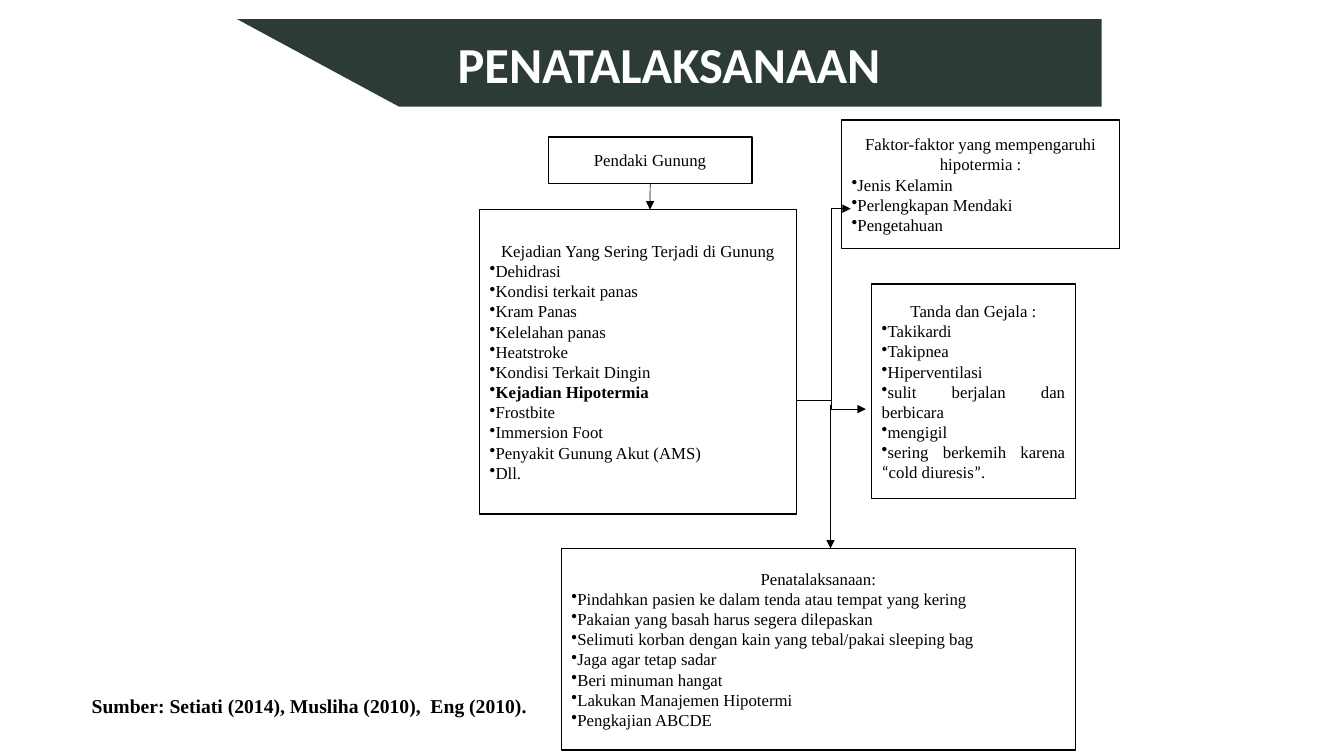
import itertools
from dataclasses import dataclass
from typing import Any

import pptx
import pptx.dml.color
import pptx.enum.shapes
import pptx.enum.text
import pptx.oxml
import pptx.oxml.ns
import pptx.util
from pptx.util import Cm

ALIGN = pptx.enum.text.PP_ALIGN
MIDDLE = pptx.enum.text.MSO_ANCHOR.MIDDLE
CONNECTOR = pptx.enum.shapes.MSO_CONNECTOR


@dataclass(frozen=True)
class Theme:
    banner: str = "2C3B38"
    paper: str = "FFFFFF"
    ink: str = "000000"
    heading_font: str = "Calibri"
    body_font: str = "Times New Roman"
    title_size: float = 36
    source_size: float = 14
    body_size: float = 12
    box_line: float = 1
    arrow_line: float = 0.5


@dataclass(frozen=True)
class Box:
    left: float
    top: float
    width: float
    height: float
    heading: str
    items: tuple[str, ...] = ()
    item_align: Any = ALIGN.LEFT
    bold_item: str = ""


@dataclass(frozen=True)
class Arrow:
    start: tuple[float, float]
    end: tuple[float, float]
    kind: Any = CONNECTOR.STRAIGHT
    bend: int | None = None


THEME = Theme()

CLIMBERS = Box(13.82, 3.45, 5.13, 1.17, "Pendaki Gunung")
INCIDENTS = Box(
    12.09, 5.28, 7.98, 7.67, "Kejadian Yang Sering Terjadi di Gunung",
    ("Dehidrasi", "Kondisi terkait panas", "Kram Panas", "Kelelahan panas",
     "Heatstroke", "Kondisi Terkait Dingin", "Kejadian Hipotermia", "Frostbite",
     "Immersion Foot", "Penyakit Gunung Akut (AMS)", "Dll."),
    bold_item="Kejadian Hipotermia")
FACTORS = Box(
    21.21, 3.02, 7.01, 3.25, "Faktor-faktor yang mempengaruhi hipotermia :",
    ("Jenis Kelamin", "Perlengkapan Mendaki", "Pengetahuan"), ALIGN.JUSTIFY)
SYMPTOMS = Box(
    21.97, 7.16, 5.13, 5.41, "Tanda dan Gejala :",
    ("Takikardi", "Takipnea", "Hiperventilasi", "sulit berjalan dan berbicara",
     "mengigil", "sering berkemih karena “cold diuresis”."), ALIGN.JUSTIFY)
TREATMENT = Box(
    14.15, 13.82, 12.95, 5.08, "Penatalaksanaan:",
    ("Pindahkan pasien ke dalam tenda atau tempat yang kering",
     "Pakaian yang basah harus segera dilepaskan",
     "Selimuti korban dengan kain yang tebal/pakai sleeping bag",
     "Jaga agar tetap sadar", "Beri minuman hangat",
     "Lakukan Manajemen Hipotermi", "Pengkajian ABCDE"))

CLIMBERS_ARROW = Arrow((16.38, 4.62), (16.38, 5.28))
BRANCH_ARROWS = (
    Arrow((20.07, 10.08), (21.82, 10.31), CONNECTOR.ELBOW),
    Arrow((20.93, 10.21), (20.93, 13.82)),
    Arrow((21.06, 10.31), (21.44, 5.26), CONNECTOR.ELBOW, bend=-31800),
)


def apply_format(target: Any, values: dict[str, Any]) -> None:
    for name, value in values.items():
        setattr(target, name, value)


def rgb(code: str) -> pptx.dml.color.RGBColor:
    return pptx.dml.color.RGBColor.from_string(code)


def add_xml(parent: Any, tag: str, **attributes: str) -> Any:
    child = pptx.oxml.parse_xml(f"<{tag} {pptx.oxml.ns.nsdecls('a')}/>")
    for name, value in attributes.items():
        child.set(name, value)
    parent.append(child)
    return child


def write(paragraph: Any, text: str, font: str, size: float, color: str,
          bold: bool = False) -> None:
    """Curly quotes take the heading font; all else takes the given one."""
    for is_quote, letters in itertools.groupby(text, lambda letter: letter in "“”"):
        run = paragraph.add_run()
        run.text = "".join(letters)
        apply_format(run.font, {
            "name": THEME.heading_font if is_quote else font,
            "size": pptx.util.Pt(size), "bold": bold})
        run.font.color.rgb = rgb(color)


def draw_banner(slide: Any) -> None:
    left, top, right, bottom, slant = 5.97, 0.48, 27.76, 2.69, 10.06
    builder = slide.shapes.build_freeform(Cm(left), Cm(top))
    builder.add_line_segments(
        [(Cm(right), Cm(top)), (Cm(right), Cm(bottom)), (Cm(slant), Cm(bottom))])
    banner = builder.convert_to_shape()
    banner.shadow.inherit = False
    banner.fill.solid()
    banner.fill.fore_color.rgb = rgb(THEME.banner)
    banner.line.fill.background()

    title = slide.shapes.title
    apply_format(title, {"left": Cm(left), "top": Cm(top),
                         "width": Cm(right - left), "height": Cm(bottom - top)})
    apply_format(title.text_frame, {
        "vertical_anchor": MIDDLE, "word_wrap": True,
        "auto_size": pptx.enum.text.MSO_AUTO_SIZE.NONE})
    heading = title.text_frame.paragraphs[0]
    heading.alignment = ALIGN.CENTER
    write(heading, "PENATALAKSANAAN", THEME.heading_font, THEME.title_size,
          THEME.paper, bold=True)
    banner.element.addnext(title.element)  # title in front of the banner


def draw_source(slide: Any) -> None:
    source = slide.shapes.add_textbox(Cm(2.06), Cm(17.35), Cm(15.52), Cm(0.86))
    apply_format(source.text_frame, {
        "word_wrap": True, "vertical_anchor": MIDDLE,
        "auto_size": pptx.enum.text.MSO_AUTO_SIZE.SHAPE_TO_FIT_TEXT})
    write(source.text_frame.paragraphs[0],
          "Sumber: Setiati (2014), Musliha (2010),  Eng (2010).",
          THEME.body_font, THEME.source_size, THEME.ink, bold=True)


def draw_box(slide: Any, box: Box) -> Any:
    shape = slide.shapes.add_shape(
        pptx.enum.shapes.MSO_SHAPE.RECTANGLE,
        Cm(box.left), Cm(box.top), Cm(box.width), Cm(box.height))
    shape.shadow.inherit = False
    shape.fill.solid()
    shape.fill.fore_color.rgb = rgb(THEME.paper)
    shape.line.color.rgb = rgb(THEME.ink)
    shape.line.width = pptx.util.Pt(THEME.box_line)
    frame = shape.text_frame
    apply_format(frame, {"word_wrap": True, "vertical_anchor": MIDDLE})

    heading = frame.paragraphs[0]
    heading.alignment = ALIGN.CENTER
    write(heading, box.heading, THEME.body_font, THEME.body_size, THEME.ink)
    for item in box.items:
        paragraph = frame.add_paragraph()
        paragraph.alignment = box.item_align
        properties = paragraph._p.get_or_add_pPr()
        apply_format_xml = {"marL": "0", "indent": "0"}
        for name, value in apply_format_xml.items():
            properties.set(name, value)
        add_xml(properties, "a:buChar", char="•")
        write(paragraph, item, THEME.body_font, THEME.body_size, THEME.ink,
              bold=item == box.bold_item)
    return shape


def draw_arrow(slide: Any, arrow: Arrow) -> Any:
    connector = slide.shapes.add_connector(
        arrow.kind, *(Cm(value) for value in arrow.start + arrow.end))
    connector.line.color.rgb = rgb(THEME.ink)
    connector.line.width = pptx.util.Pt(THEME.arrow_line)
    add_xml(connector.line._get_or_add_ln(), "a:tailEnd", type="triangle")
    properties = connector.element.spPr
    add_xml(properties, "a:effectLst")
    if arrow.bend is not None:
        guides = properties.find(pptx.oxml.ns.qn("a:prstGeom")).get_or_add_avLst()
        add_xml(guides, "a:gd", name="adj1", fmla=f"val {arrow.bend}")
    return connector


def main() -> None:
    deck = pptx.Presentation()
    apply_format(deck, {"slide_width": Cm(33.87), "slide_height": Cm(19.05)})
    slide = deck.slides.add_slide(deck.slide_layouts[5])

    # Title and source
    draw_banner(slide)
    draw_source(slide)

    # Flow chart
    climbers = draw_box(slide, CLIMBERS)
    climbers_arrow = draw_arrow(slide, CLIMBERS_ARROW)
    climbers_arrow.begin_connect(climbers, 2)
    for box in (INCIDENTS, FACTORS, SYMPTOMS, TREATMENT):
        draw_box(slide, box)
    for arrow in BRANCH_ARROWS:
        draw_arrow(slide, arrow)

    deck.save("out.pptx")


if __name__ == "__main__":
    main()
